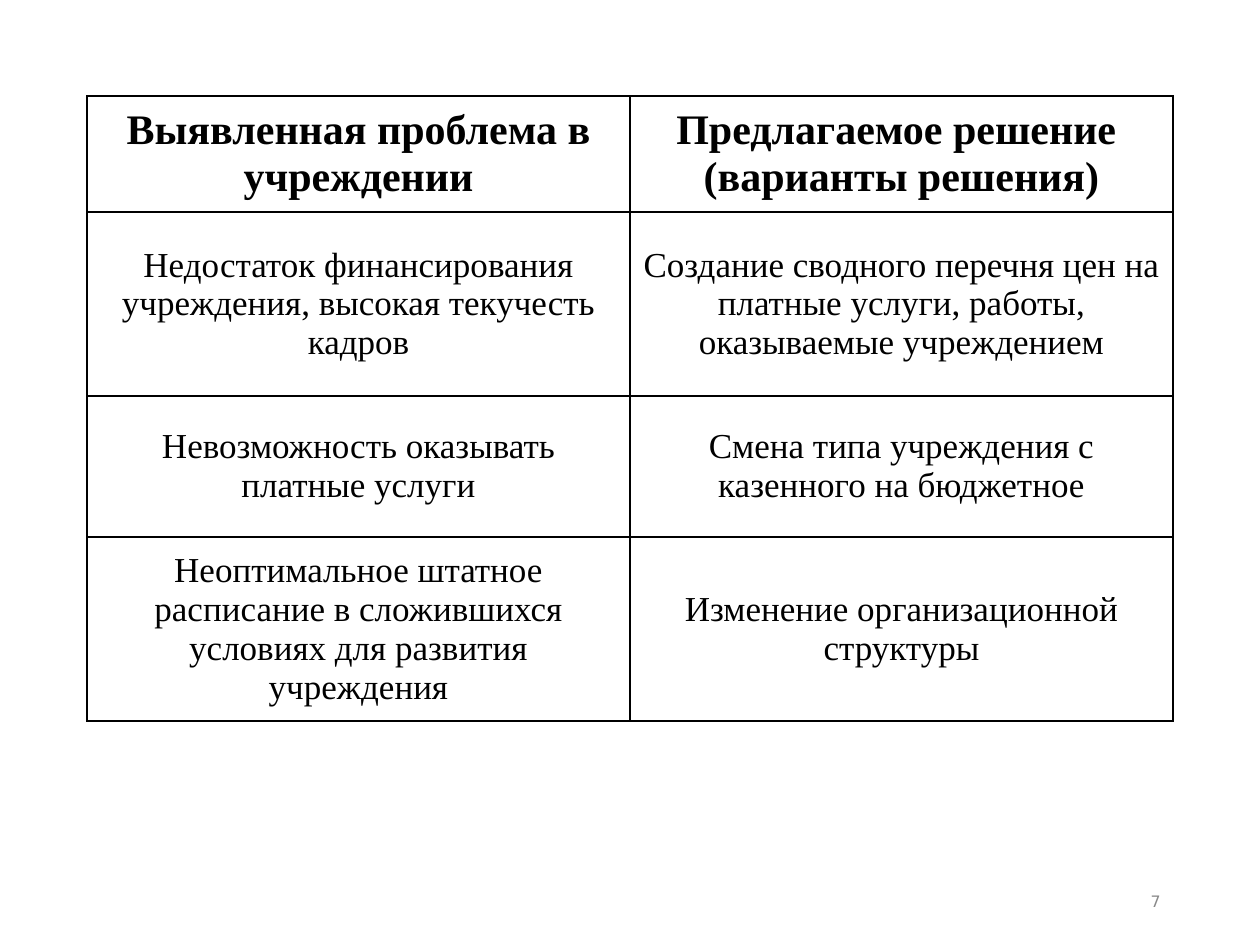
"""Build a slide with a table of problems found and solutions proposed."""
from dataclasses import dataclass

import lxml.etree
import pptx
import pptx.dml.color
import pptx.enum.text
import pptx.oxml.ns
import pptx.util

EMU_PER_PX = 914400 / 126
ALIGN = pptx.enum.text.PP_ALIGN


@dataclass(frozen=True)
class Theme:
    ink: str = "000000"
    muted: str = "898989"
    table_font: str = "Times New Roman"
    number_font: str = "DejaVu Sans"
    header_size: int = 24
    body_size: int = 20
    number_size: int = 9
    border_width: int = 1


@dataclass(frozen=True)
class TextStyle:
    font: str
    size: int
    color: str
    align: ALIGN
    bold: bool = False


@dataclass(frozen=True)
class TableRow:
    height: int
    problem: tuple[str, ...]
    solution: tuple[str, ...]
    style: TextStyle


THEME = Theme()
HEADER = TextStyle(THEME.table_font, THEME.header_size, THEME.ink, ALIGN.CENTER, True)
BODY = TextStyle(THEME.table_font, THEME.body_size, THEME.ink, ALIGN.CENTER)
NUMBER = TextStyle(THEME.number_font, THEME.number_size, THEME.muted, ALIGN.RIGHT)

COLUMN_WIDTH = 543
ROWS = (
    TableRow(116, ("Выявленная проблема в учреждении",),
             ("Предлагаемое решение ", "(варианты решения)"), HEADER),
    TableRow(184, ("Недостаток финансирования учреждения, высокая текучесть кадров",),
             ("Создание сводного перечня цен на платные услуги, работы, "
              "оказываемые учреждением",), BODY),
    TableRow(141, ("Невозможность оказывать платные услуги",),
             ("Смена типа учреждения с казенного на бюджетное",), BODY),
    TableRow(184, ("Неоптимальное штатное расписание в сложившихся условиях "
                   "для развития учреждения",),
             ("Изменение организационной структуры",), BODY),
)


def px(length: int) -> int:
    return round(length * EMU_PER_PX)


def write_text(frame, lines: tuple[str, ...], style: TextStyle) -> None:
    for index, line in enumerate(lines):
        para = frame.add_paragraph() if index else frame.paragraphs[0]
        para.alignment = style.align
        span = para.add_run()
        span.text = line
        span.font.name = style.font
        span.font.size = pptx.util.Pt(style.size)
        span.font.bold = style.bold
        span.font.color.rgb = pptx.dml.color.RGBColor.from_string(style.color)


def draw_borders(cell) -> None:
    qn = pptx.oxml.ns.qn
    properties = cell._tc.get_or_add_tcPr()
    for side in ("lnL", "lnR", "lnT", "lnB"):
        line = lxml.etree.SubElement(properties, qn(f"a:{side}"))
        line.set("w", str(pptx.util.Pt(THEME.border_width)))
        fill = lxml.etree.SubElement(line, qn("a:solidFill"))
        lxml.etree.SubElement(fill, qn("a:srgbClr")).set("val", THEME.ink)


def draw_table(page, left: int, top: int, rows: tuple[TableRow, ...]) -> None:
    height = sum(row.height for row in rows)
    table = page.shapes.add_table(
        len(rows), 2, px(left), px(top), px(2 * COLUMN_WIDTH), px(height)
    ).table
    table.first_row = False
    table.horz_banding = False
    for column in table.columns:
        column.width = px(COLUMN_WIDTH)
    for index, row in enumerate(rows):
        table.rows[index].height = px(row.height)
        for cell, lines in zip(table.rows[index].cells, (row.problem, row.solution)):
            cell.vertical_anchor = pptx.enum.text.MSO_ANCHOR.MIDDLE
            draw_borders(cell)
            cell.fill.background()
            write_text(cell.text_frame, lines, row.style)


def draw_page_number(page, number: str) -> None:
    box = page.shapes.add_textbox(px(890), px(876), px(283), px(50))
    frame = box.text_frame
    frame.word_wrap = True
    frame.vertical_anchor = pptx.enum.text.MSO_ANCHOR.MIDDLE
    write_text(frame, (number,), NUMBER)


def main() -> None:
    deck = pptx.Presentation()
    deck.slide_width = px(1260)
    deck.slide_height = px(945)
    page = deck.slides.add_slide(deck.slide_layouts[6])
    draw_table(page, 87, 96, ROWS)
    draw_page_number(page, "7")
    deck.save("out.pptx")


if __name__ == "__main__":
    main()
